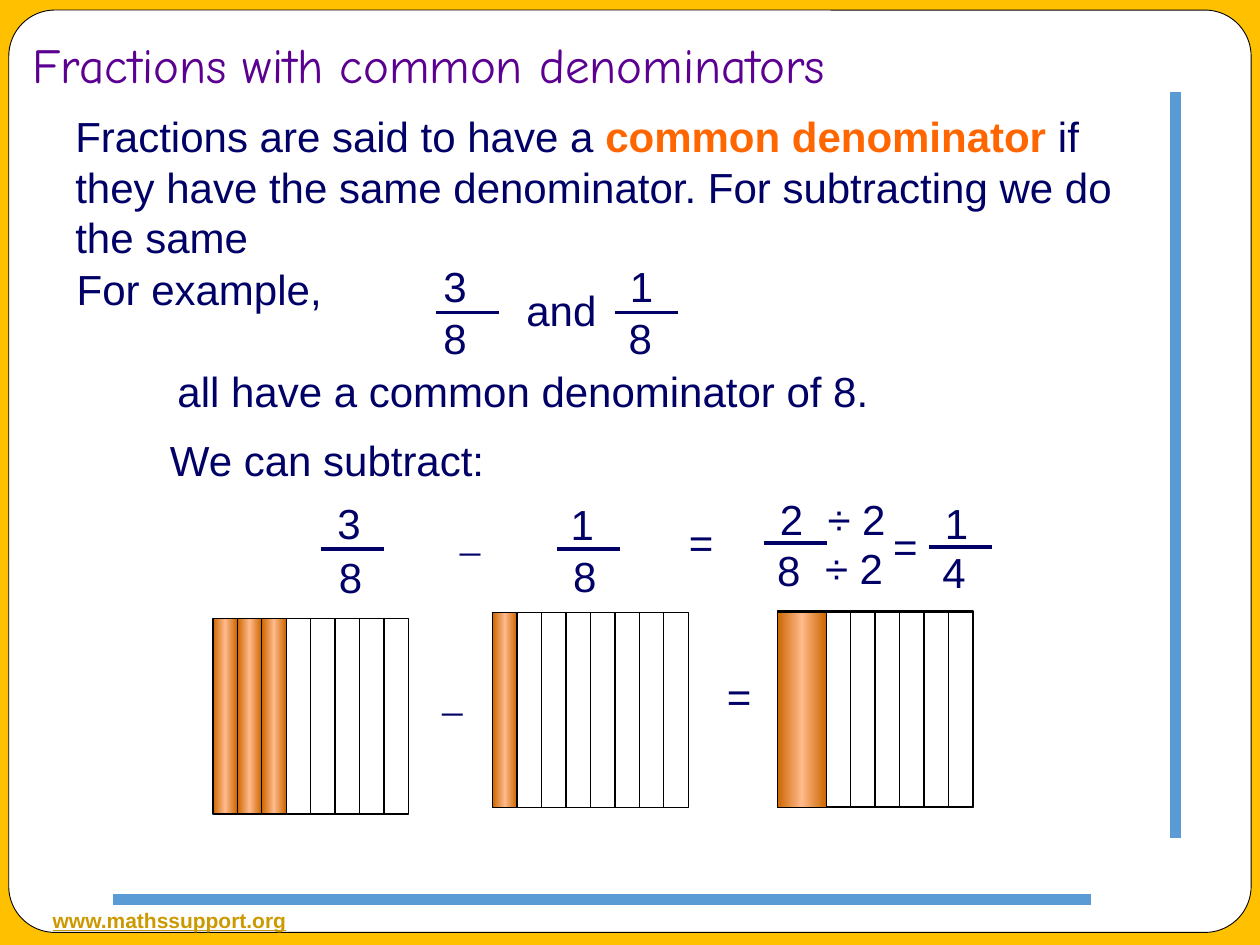
from copy import deepcopy
from dataclasses import dataclass

from lxml import etree
from pptx import Presentation
from pptx.dml.color import RGBColor
from pptx.enum.shapes import MSO_CONNECTOR as Connector
from pptx.enum.shapes import MSO_SHAPE as Shape
from pptx.enum.text import MSO_ANCHOR as Anchor
from pptx.enum.text import MSO_AUTO_SIZE as AutoSize
from pptx.oxml.ns import qn
from pptx.util import Inches, Pt

INK, BLACK, WHITE = "010066", "000000", "FFFFFF"
GOLD, BLUE, PURPLE, ORANGE = "FFC000", "5B9BD5", "5B0091", "FF6600"
SHADED = [(0, "CC6600"), (0.5, "FFBA8B"), (1, "CC6600")]
BODY = {"size": Pt(24), "name": "Arial", "color": INK}
MINUS = BODY | {"name": "Montserrat"}
STRIP_PITCH, STRIP_HEIGHT, BAR_LENGTH = 0.194, 1.55, 0.5
DIGIT_WIDTH = 0.39


@dataclass
class Label:
    text: str
    left: float
    top: float
    width: float
    style: dict


@dataclass
class Fraction:
    numerator: str
    numerator_at: tuple[float, float]
    denominator: str
    denominator_at: tuple[float, float]
    bar_at: tuple[float, float]


@dataclass
class StripModel:
    """A whole cut into equal strips, the first ones shaded."""
    left: float
    top: float
    strips: int
    shaded: int
    strip_width: float = STRIP_PITCH


LABELS = [
    Label("For example,", 0.51, 2.04, 2.15, BODY),
    Label("and", 4.08, 2.21, 0.76, BODY),
    Label("all have a common denominator of 8.", 1.31, 2.85, 5.88, BODY),
    Label("We can subtract:", 1.25, 3.4, 2.72, BODY),
    Label("–", 3.55, 4.11, 0.37, MINUS),
    Label("=", 5.37, 4.05, 0.4, BODY),
    Label("÷ 2", 6.47, 3.87, 0.67, BODY),
    Label("÷ 2", 6.45, 4.26, 0.67, BODY),
    Label("=", 6.99, 4.08, 0.4, BODY),
    Label("–", 3.41, 5.38, 0.37, MINUS),
    Label("=", 5.67, 5.27, 0.4, BODY),
]
FRACTIONS = [
    Fraction("3", (3.42, 2.02), "8", (3.42, 2.43), (3.46, 2.48)),
    Fraction("1", (4.9, 2.02), "8", (4.89, 2.43), (4.88, 2.48)),
    Fraction("3", (2.58, 3.9), "8", (2.59, 4.33), (2.55, 4.36)),
    Fraction("1", (4.43, 3.91), "8", (4.45, 4.32), (4.42, 4.36)),
    Fraction("2", (6.09, 3.87), "8", (6.07, 4.27), (6.06, 4.31)),
    Fraction("1", (7.4, 3.9), "4", (7.38, 4.29), (7.37, 4.34)),
]
MODELS = [
    StripModel(1.69, 4.91, 8, 3),
    StripModel(3.91, 4.86, 8, 1),
    StripModel(6.17, 4.85, 8, 2),
    StripModel(6.17, 4.86, 4, 1, 2 * STRIP_PITCH),
]


def rgb(value: str) -> RGBColor:
    return RGBColor.from_string(value)


def add_box(slide, kind, left: float, top: float, width: float, height: float,
            fill: str | None = None, line: float = 0):
    box = slide.shapes.add_shape(kind, Inches(left), Inches(top), Inches(width), Inches(height))
    box.shadow.inherit = False
    if fill:
        box.fill.solid()
        box.fill.fore_color.rgb = rgb(fill)
    else:
        box.fill.background()
    if line:
        box.line.color.rgb = rgb(BLACK)
        box.line.width = Pt(line)
    else:
        box.line.fill.background()
    return box


def add_line(slide, start: tuple[float, float], end: tuple[float, float],
             color: str, width: float) -> None:
    line = slide.shapes.add_connector(Connector.STRAIGHT, *map(Inches, start + end))
    line.line.color.rgb = rgb(color)
    line.line.width = Pt(width)
    etree.SubElement(line._element.spPr, qn("a:effectLst"))


def add_text(slide, left: float, top: float, width: float, height: float,
             runs: list[tuple[str, dict]], wrap: bool = False, **frame_format) -> None:
    frame = slide.shapes.add_textbox(
        Inches(left), Inches(top), Inches(width), Inches(height)).text_frame
    settings = {"word_wrap": wrap, "auto_size": AutoSize.SHAPE_TO_FIT_TEXT} | frame_format
    for name, value in settings.items():
        setattr(frame, name, value)
    for text, style in runs:
        run = frame.paragraphs[0].add_run()
        run.text = text
        for name, value in style.items():
            if name == "color":
                run.font.color.rgb = rgb(value)
            else:
                setattr(run.font, name, value)


def add_label(slide, label: Label) -> None:
    add_text(slide, label.left, label.top, label.width, 0.5, [(label.text, label.style)])


def add_fraction(slide, fraction: Fraction) -> None:
    add_label(slide, Label(fraction.numerator, *fraction.numerator_at, DIGIT_WIDTH, BODY))
    bar_left, bar_y = fraction.bar_at
    add_line(slide, fraction.bar_at, (bar_left + BAR_LENGTH, bar_y), INK, 2.25)
    add_label(slide, Label(fraction.denominator, *fraction.denominator_at, DIGIT_WIDTH, BODY))


def shade(box) -> None:
    """Fill a box with the three-stop orange gradient."""
    box.fill.gradient()
    box.fill.gradient_angle = 0
    stop_list = box._element.spPr.find(".//" + qn("a:gsLst"))
    stop_list.append(deepcopy(stop_list[-1]))
    for stop, (position, color) in zip(box.fill.gradient_stops, SHADED):
        stop.position = position
        stop.color.rgb = rgb(color)


def add_model(slide, model: StripModel) -> None:
    for index in range(model.strips):
        strip = add_box(slide, Shape.RECTANGLE, model.left + index * model.strip_width,
                        model.top, model.strip_width, STRIP_HEIGHT, line=0.75)
        if index < model.shaded:
            shade(strip)


def add_frame(slide) -> None:
    add_box(slide, Shape.RECTANGLE, 0, 0, 10, 7.5, GOLD)
    page = add_box(slide, Shape.ROUNDED_RECTANGLE, 0.07, 0.08, 9.86, 7.32, WHITE, 0.5)
    page.adjustments[0] = 0.05
    site = {"size": Pt(12), "name": "Arial", "color": "CC9900", "bold": True, "underline": True}
    add_text(slide, 0.32, 7.15, 2.3, 0.3, [("www.mathssupport.org", site)],
             wrap=True, auto_size=AutoSize.NONE)
    add_line(slide, (8.66, 7.14), (0.9, 7.14), BLUE, 6.5)
    add_line(slide, (9.33, 0.73), (9.33, 6.65), BLUE, 6.5)


def main() -> None:
    deck = Presentation()
    deck.slide_width, deck.slide_height = Inches(10), Inches(7.5)
    slide = deck.slides.add_slide(deck.slide_layouts[6])
    add_frame(slide)
    heading = {"size": Pt(28), "name": "Comic Neue", "color": PURPLE}
    add_text(slide, 0.16, 0.2, 8.17, 0.64, [("Fractions with common denominators", heading)],
             wrap=True, auto_size=AutoSize.NONE, vertical_anchor=Anchor.BOTTOM,
             margin_bottom=Inches(0.1))
    add_text(slide, 0.5, 0.83, 8.77, 1.31, [
        ("Fractions are said to have a ", BODY),
        ("common denominator", BODY | {"color": ORANGE, "bold": True}),
        (" if they have the same denominator. For subtracting we do the same", BODY),
    ], wrap=True)
    for label in LABELS:
        add_label(slide, label)
    for fraction in FRACTIONS:
        add_fraction(slide, fraction)
    for model in MODELS:
        add_model(slide, model)
    deck.save("out.pptx")


if __name__ == "__main__":
    main()
